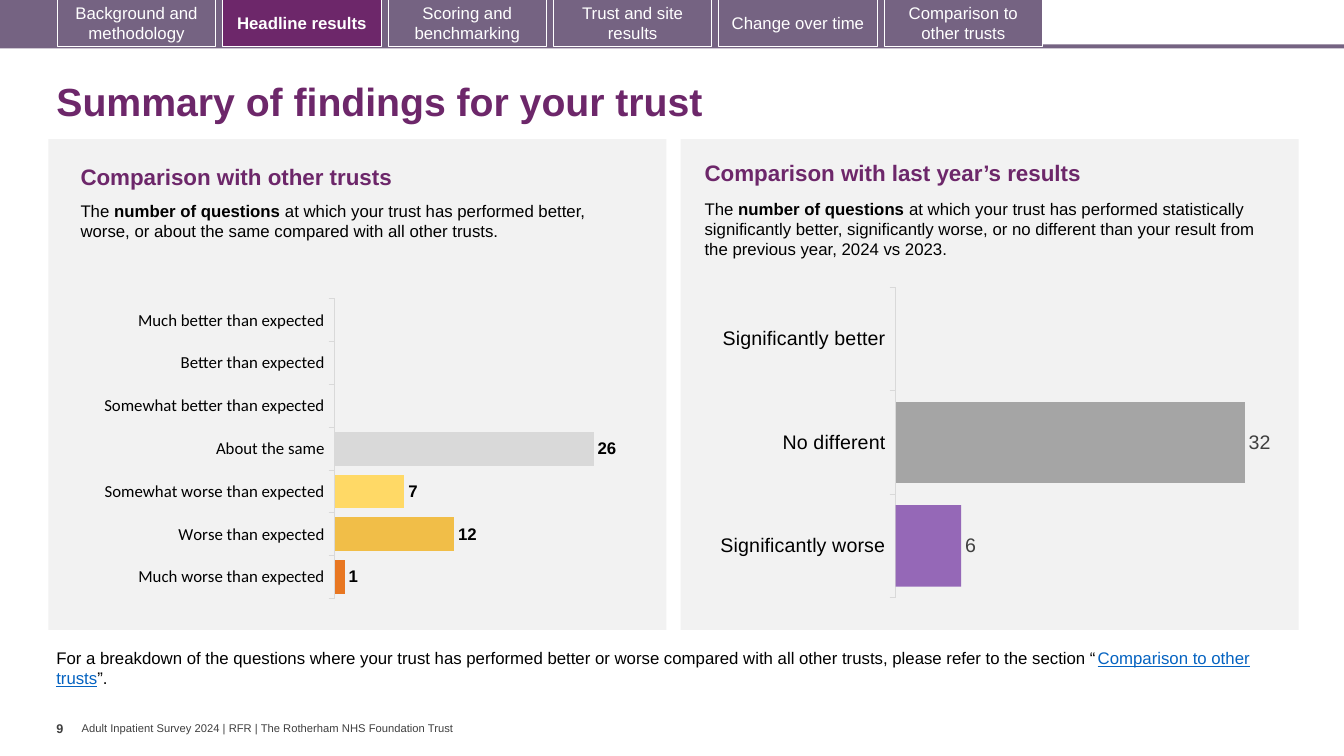
import pptx
import pptx.chart.data
import pptx.dml.color
import pptx.enum.chart
import pptx.enum.shapes
import pptx.enum.text
import pptx.oxml
import pptx.oxml.ns
import pptx.util
from pptx.util import Inches

RGBColor = pptx.dml.color.RGBColor
Anchor = pptx.enum.text.MSO_ANCHOR
Align = pptx.enum.text.PP_ALIGN

PLUM = RGBColor(0x6D, 0x27, 0x6A)
MAUVE = RGBColor(0x75, 0x63, 0x82)
PANEL = RGBColor(0xF2, 0xF2, 0xF2)
WHITE = RGBColor(0xFF, 0xFF, 0xFF)
BLACK = RGBColor(0, 0, 0)
DARK = RGBColor(0x40, 0x40, 0x40)
AXIS = RGBColor(0xD9, 0xD9, 0xD9)
LINK = RGBColor(0x05, 0x63, 0xC1)
BLUE = RGBColor(0x44, 0x72, 0xC4)
TEAL = RGBColor(0x41, 0x99, 0x99)
GREEN = RGBColor(0x5F, 0xBD, 0x83)
PALE_GREEN = RGBColor(0xA9, 0xD1, 0x8E)
YELLOW = RGBColor(0xFF, 0xD9, 0x66)
AMBER = RGBColor(0xF1, 0xBE, 0x48)
ORANGE = RGBColor(0xE8, 0x77, 0x22)
SKY = RGBColor(0x9D, 0xC3, 0xE6)
GREY = RGBColor(0xA5, 0xA5, 0xA5)
PURPLE = RGBColor(0x70, 0x30, 0xA0)

TABS = ["Background and methodology", "Headline results", "Scoring and benchmarking",
        "Trust and site results", "Change over time", "Comparison to other trusts"]
CURRENT_TAB = "Headline results"

TRUST_RESULTS = [
    ("Much better than expected", None, TEAL),
    ("Better than expected", None, GREEN),
    ("Somewhat better than expected", None, PALE_GREEN),
    ("About the same", 26, AXIS),
    ("Somewhat worse than expected", 7, YELLOW),
    ("Worse than expected", 12, AMBER),
    ("Much worse than expected", 1, ORANGE),
]
YEAR_RESULTS = [
    ("Significantly better", None, SKY),
    ("No different", 32, GREY),
    ("Significantly worse", 6, PURPLE),
]


def set_font(font, size, color, bold=False, name="Arial"):
    font.name = name
    font.size = pptx.util.Pt(size)
    font.bold = bold
    font.color.rgb = color


def add_rectangle(slide, left, top, width, height, fill=None):
    shape = slide.shapes.add_shape(
        pptx.enum.shapes.MSO_SHAPE.RECTANGLE,
        Inches(left), Inches(top), Inches(width), Inches(height))
    shape.shadow.inherit = False
    shape.line.fill.background()
    if fill is None:
        shape.fill.background()
    else:
        shape.fill.solid()
        shape.fill.fore_color.rgb = fill
    return shape


def add_tab(slide, left, label):
    current = label == CURRENT_TAB
    shape = add_rectangle(slide, left, -0.01, 1.57, 0.47, PLUM if current else None)
    shape.line.color.rgb = WHITE
    shape.line.width = pptx.util.Pt(0.75)
    shape.text_frame.vertical_anchor = Anchor.MIDDLE
    paragraph = shape.text_frame.paragraphs[0]
    paragraph.text = label
    paragraph.alignment = Align.CENTER
    set_font(paragraph.font, 12, WHITE, current)


def add_text(slide, left, top, width, height, text, size=12, color=BLACK, bold=False):
    box = slide.shapes.add_textbox(Inches(left), Inches(top), Inches(width), Inches(height))
    frame = box.text_frame
    frame.word_wrap = True
    paragraph = frame.paragraphs[0]
    paragraph.text = text
    set_font(paragraph.font, size, color, bold)
    return frame


def add_panel(slide, left, heading_box, heading, body_box, finding):
    add_rectangle(slide, left, 1.38, 6.13, 4.87, PANEL)
    add_text(slide, *heading_box, heading, 16, PLUM, True)
    paragraph = add_text(slide, *body_box, "The ").paragraphs[0]
    emphasis = paragraph.add_run()
    emphasis.text = "number of questions "
    emphasis.font.bold = True
    paragraph.add_run().text = finding


def set_plot_layout(chart, x, y, width, height):
    plot_area = chart.element.xpath("c:chart/c:plotArea")[0]
    for layout in plot_area.xpath("c:layout"):
        plot_area.remove(layout)
    plot_area.insert(0, pptx.oxml.parse_xml(
        f'<c:layout {pptx.oxml.ns.nsdecls("c")}><c:manualLayout>'
        '<c:layoutTarget val="inner"/><c:xMode val="edge"/><c:yMode val="edge"/>'
        f'<c:x val="{x}"/><c:y val="{y}"/><c:w val="{width}"/><c:h val="{height}"/>'
        '</c:manualLayout></c:layout>'))


def add_results_chart(slide, box, results, maximum, layout, size, axis_font, label_color, label_bold):
    data = pptx.chart.data.CategoryChartData(number_format="0")
    data.categories = [category for category, value, color in results]
    data.add_series("Questions", [value for category, value, color in results])
    chart = slide.shapes.add_chart(
        pptx.enum.chart.XL_CHART_TYPE.BAR_CLUSTERED, *map(Inches, box), data).chart
    chart.has_legend = False
    chart.has_title = False
    set_font(chart.font, size, BLACK, name=axis_font)
    set_plot_layout(chart, *layout)

    category_axis = chart.category_axis
    category_axis.reverse_order = True
    category_axis.has_major_gridlines = False
    category_axis.major_tick_mark = pptx.enum.chart.XL_TICK_MARK.OUTSIDE
    category_axis.format.line.color.rgb = AXIS
    category_axis.format.line.width = pptx.util.Pt(0.75)
    set_font(category_axis.tick_labels.font, size, BLACK, name=axis_font)
    value_axis = chart.value_axis
    value_axis.visible = False
    value_axis.has_major_gridlines = False
    value_axis.minimum_scale = 0
    value_axis.maximum_scale = maximum

    plot = chart.plots[0]
    plot.gap_width = 27
    plot.vary_by_categories = False
    plot.has_data_labels = True
    labels = plot.data_labels
    labels.show_value = True
    labels.position = pptx.enum.chart.XL_LABEL_POSITION.OUTSIDE_END
    set_font(labels.font, size, label_color, label_bold)
    series = plot.series[0]
    series.invert_if_negative = False
    series.format.fill.solid()
    series.format.fill.fore_color.rgb = BLUE
    for index, (category, value, color) in enumerate(results):
        fill = series.points[index].format.fill
        fill.solid()
        fill.fore_color.rgb = color
    return chart


def set_point_opacity(chart, index, percent):
    color = chart.element.xpath(f'.//c:dPt[c:idx/@val="{index}"]//a:srgbClr')[0]
    color.append(pptx.oxml.parse_xml(
        f'<a:alpha {pptx.oxml.ns.nsdecls("a")} val="{percent * 1000}"/>'))


def set_title(slide, text):
    title = slide.shapes.title
    title.left, title.top = Inches(0.46), Inches(0.67)
    title.width, title.height = Inches(12.49), Inches(0.72)
    title.text_frame.auto_size = pptx.enum.text.MSO_AUTO_SIZE.NONE
    title.text_frame.vertical_anchor = Anchor.MIDDLE
    paragraph = title.text_frame.paragraphs[0]
    paragraph.text = text
    paragraph.alignment = Align.LEFT
    paragraph.line_spacing = 0.9
    set_font(paragraph.font, 28, PLUM, True)


def add_footer(slide):
    frame = add_text(slide, 0.81, 7.16, 6.1, 0.13,
                     "Adult Inpatient Survey 2024 | RFR | The Rotherham NHS Foundation Trust", 8, DARK)
    frame.vertical_anchor = Anchor.MIDDLE
    frame.margin_left = frame.margin_right = frame.margin_top = frame.margin_bottom = 0
    number = add_text(slide, 0.56, 7.1, 0.25, 0.4, "9", 9, DARK, True)
    number.margin_left = number.margin_right = 0


def main():
    presentation = pptx.Presentation()
    presentation.slide_width, presentation.slide_height = Inches(13.33), Inches(7.5)
    slide = presentation.slides.add_slide(presentation.slide_layouts[5])

    add_rectangle(slide, -0.03, 0.44, 13.36, 0.04, MAUVE)
    add_rectangle(slide, -0.03, 0, 10.37, 0.47, MAUVE)
    for index, label in enumerate(TABS):
        add_tab(slide, 0.57 + 1.64 * index, label)
    set_title(slide, "Summary of findings for your trust")

    add_panel(slide, 0.48, (0.7, 1.57, 5.52, 0.37), "Comparison with other trusts",
              (0.7, 1.94, 5.29, 0.71),
              "at which your trust has performed better, worse, or about the same "
              "compared with all other trusts.")
    add_results_chart(slide, (0.41, 2.72, 6.23, 3.41), TRUST_RESULTS, 30,
                      (0.467, 0.072, 0.476, 0.872), 12, "Calibri", BLACK, True)

    add_panel(slide, 6.75, (6.89, 1.53, 5.48, 0.37), "Comparison with last year’s results",
              (6.89, 1.92, 5.74, 0.71),
              "at which your trust has performed statistically significantly better, significantly "
              "worse, or no different than your result from the previous year, 2024 vs 2023.")
    year_chart = add_results_chart(slide, (6.64, 2.73, 6.23, 3.39), YEAR_RESULTS, 35,
                                   (0.36, 0.035, 0.608, 0.909), 14, "Arial", DARK, False)
    set_point_opacity(year_chart, 2, 71)

    paragraph = add_text(
        slide, 0.46, 6.38, 12.21, 0.5,
        "For a breakdown of the questions where your trust has performed better or worse compared "
        "with all other trusts, please refer to the section “").paragraphs[0]
    section = paragraph.add_run()
    section.text = "Comparison to other trusts"
    section.font.color.rgb = LINK
    section.font.underline = True
    paragraph.add_run().text = "”."
    add_footer(slide)
    presentation.save("out.pptx")


if __name__ == "__main__":
    main()
